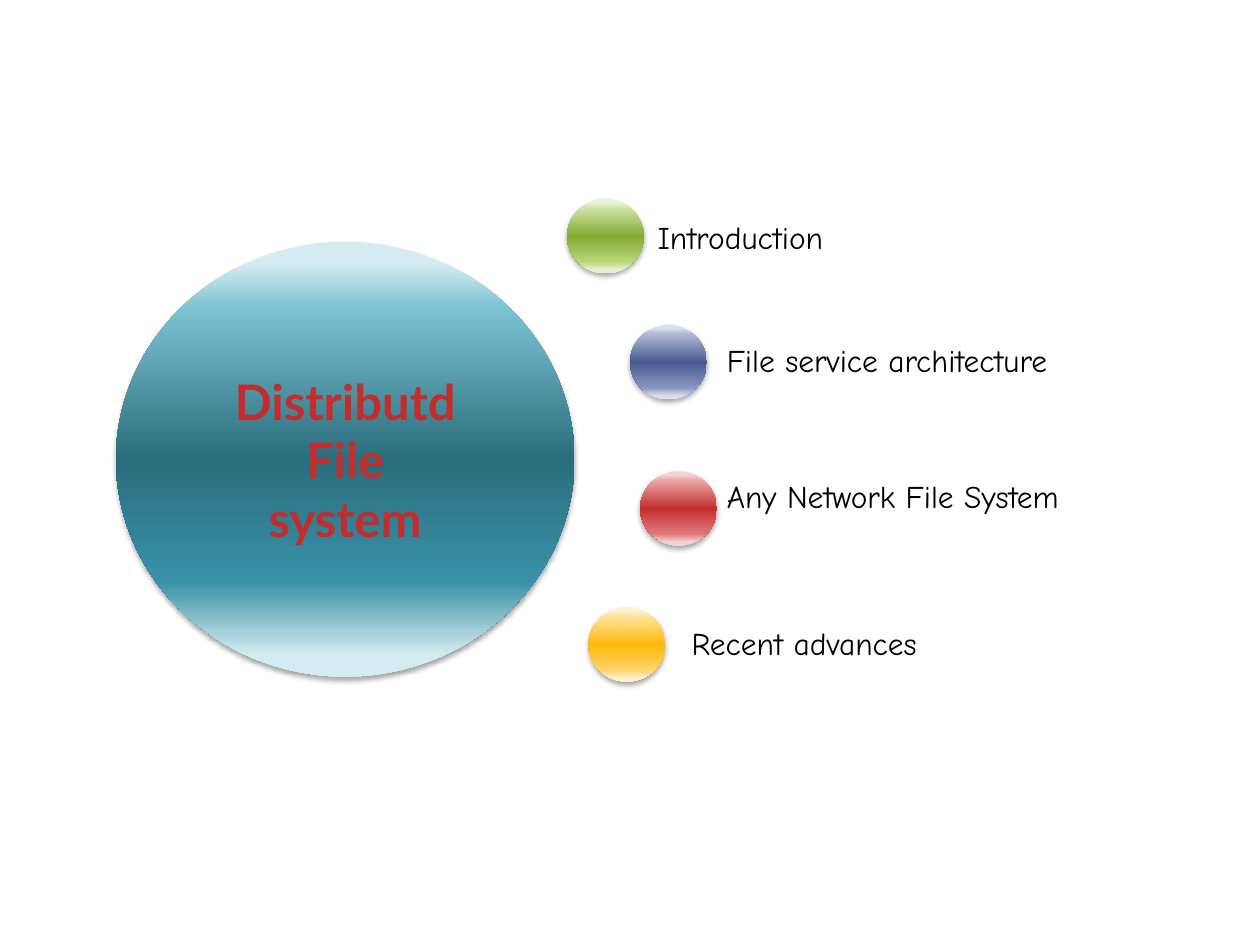
from lxml.etree import SubElement
from pptx import Presentation
from pptx.dml.color import RGBColor
from pptx.enum.shapes import MSO_SHAPE
from pptx.enum.text import MSO_ANCHOR, MSO_AUTO_SIZE, PP_ALIGN
from pptx.oxml.ns import qn
from pptx.util import Inches, Pt

# Content
TOPIC = ["Distributd File", "system"]
TOPIC_STOPS = [(5, "D4EBF1"), (15, "7EC3D4"), (50, "2A6D7D"), (78, "3891A7"), (95, "D4EBF1")]
BALL_STOPS = (5, 12, 50, 85, 95)
# label, (ball left, top), (text left, top, width, height), line spacing, edge/light/core/mid colours
ITEMS = [
    ("Introduction", (4.5, 1.58), (5.12, 1.68, 5.89, 0.71), 1.0,
     ("E8F2D3", "D0E4A6", "84AA33", "B9D77A")),
    ("File service architecture", (5, 2.58), (5.67, 2.69, 5.89, 0.37), 0.9,
     ("D7DDEB", "B0BAD7", "475A8D", "8898C3")),
    ("Any Network File System", (5.08, 3.74), (5.67, 3.77, 3.67, 0.37), 0.9,
     ("F5D3D3", "EBA7A8", "C32D2E", "E17B7C")),
    ("Recent advances", (4.67, 4.82), (5.39, 4.9, 5.89, 0.4), 1.0,
     ("FFF1CE", "FFE39D", "FEB80A", "FED46C")),
]
TOPIC_BOX = (0.92, 1.92, 3.64, 3.45)
BALL_SIZE = (0.61, 0.59)
TOPIC_FONT = {"name": "Lato", "size": Pt(28), "bold": True}
LABEL_FONT = {"name": "Comic Neue", "size": Pt(18)}


def rgb(value):
    return RGBColor.from_string(value)


def add(parent, tag, **attrs):
    return SubElement(parent, qn(tag), {k: str(v) for k, v in attrs.items()})


def add_ball(slide, box, stops):
    """Ellipse with a vertical gradient and a soft shadow below."""
    sp = slide.shapes.add_shape(MSO_SHAPE.OVAL, *map(Inches, box))
    sp.fill.gradient()
    sp.fill.gradient_angle = 270
    gs_list = sp._element.spPr.find(qn("a:gradFill")).find(qn("a:gsLst"))
    for old in list(gs_list):
        gs_list.remove(old)
    for pos, color in stops:
        add(add(gs_list, "a:gs", pos=pos * 1000), "a:srgbClr", val=color)
    sp.line.fill.background()
    sp.shadow.inherit = False
    effects = sp._element.spPr.find(qn("a:effectLst"))
    shadow = add(effects, "a:outerShdw", blurRad=Pt(3.1), dist=Pt(1.8),
                 dir=5400000, rotWithShape=0)
    add(add(shadow, "a:srgbClr", val="000000"), "a:alpha", val=35000)
    return sp


def add_run(p, text, style, color):
    r = p.add_run()
    r.text = text
    for key, value in style.items():
        setattr(r.font, key, value)
    r.font.color.rgb = rgb(color)
    return r


prs = Presentation()
prs.slide_width, prs.slide_height = Inches(10), Inches(7.5)
slide = prs.slides.add_slide(prs.slide_layouts[6])

# Main topic
tf = add_ball(slide, TOPIC_BOX, TOPIC_STOPS).text_frame
tf.word_wrap = True
tf.vertical_anchor = MSO_ANCHOR.MIDDLE
tf.margin_left = tf.margin_right = Inches(0.2)
for i, line in enumerate(TOPIC):
    p = tf.add_paragraph() if i else tf.paragraphs[0]
    p.alignment = PP_ALIGN.CENTER
    r = add_run(p, line, TOPIC_FONT, "C32D2E")
    rpr = r._r.get_or_add_rPr()
    outline = add(rpr, "a:ln", w=Pt(1.5))
    add(add(outline, "a:solidFill"), "a:srgbClr", val="FEFEFE")
    rpr.insert(0, outline)

# Subtopics
for label, corner, box, spacing, (edge, light, core, mid) in ITEMS:
    add_ball(slide, corner + BALL_SIZE, zip(BALL_STOPS, (edge, light, core, mid, edge)))
    tf = slide.shapes.add_textbox(*map(Inches, box)).text_frame
    tf.word_wrap = True
    tf.auto_size = MSO_AUTO_SIZE.SHAPE_TO_FIT_TEXT
    p = tf.paragraphs[0]
    p.line_spacing = spacing
    add_run(p, label, LABEL_FONT, "000000")

prs.save("out.pptx")
